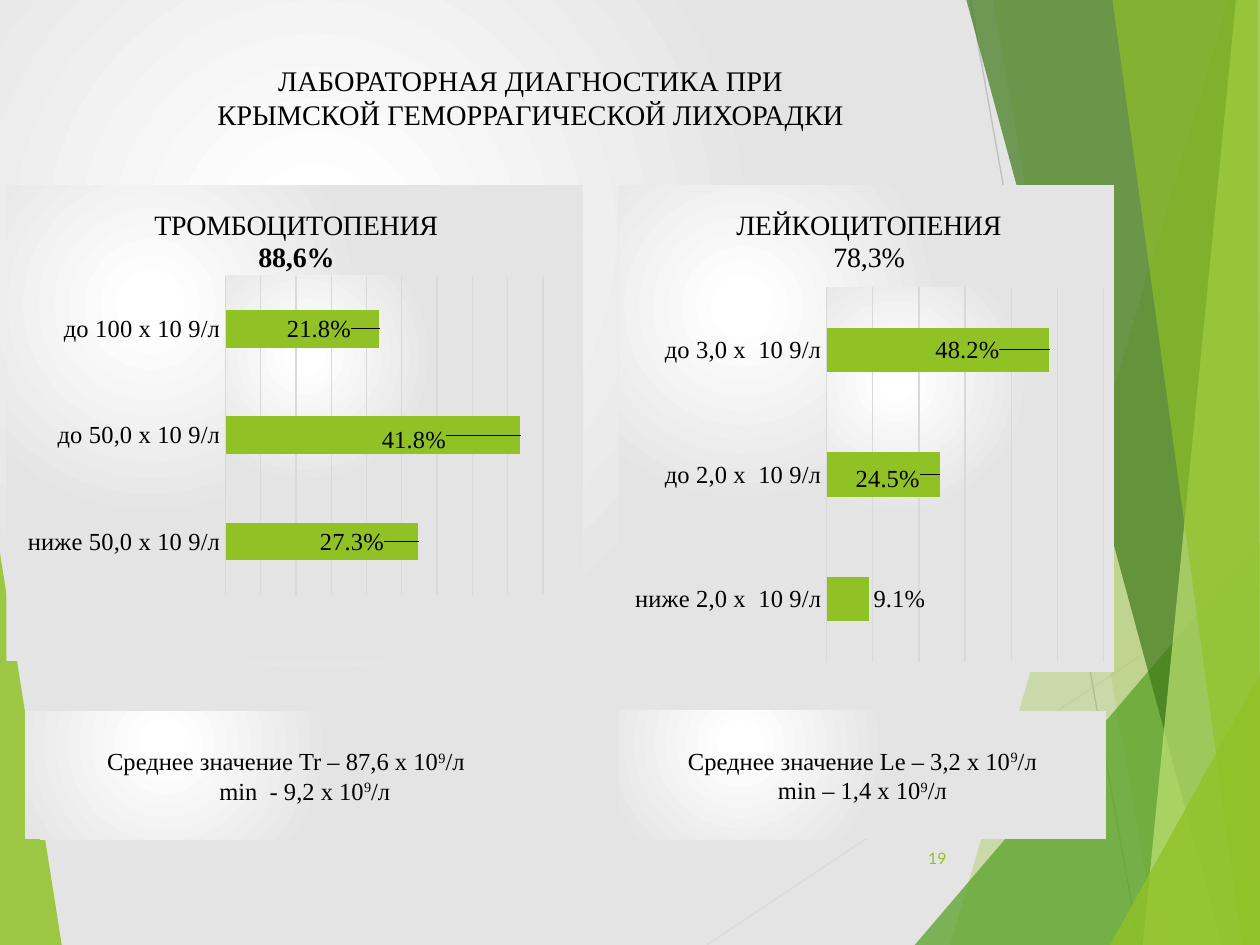
import pptx
import pptx.chart.data
import pptx.dml.color
import pptx.enum.chart
import pptx.enum.shapes
import pptx.enum.text
import pptx.oxml
import pptx.oxml.ns
import pptx.util

RGBColor = pptx.dml.color.RGBColor
LIME = RGBColor(0x90, 0xC2, 0x26)
GREEN = RGBColor(0x54, 0xA0, 0x21)
FOREST = RGBColor(0x3F, 0x78, 0x19)
PALE = RGBColor(0xC0, 0xE4, 0x74)
BLACK = RGBColor(0, 0, 0)
GRID = RGBColor(0xD9, 0xD9, 0xD9)
GREY = RGBColor(0xBF, 0xBF, 0xBF)
SERIF = "Times New Roman"
CELL = pptx.util.Inches(0.1)
COLUMNS, ROWS = 100, 75
NAMES = pptx.oxml.ns.nsdecls("a", "c")
GLOW = (
    f'<a:gradFill {NAMES} rotWithShape="1"><a:gsLst>'
    '<a:gs pos="5000"><a:srgbClr val="FFFFFF"/></a:gs>'
    '<a:gs pos="59000"><a:srgbClr val="E4E4E4"/></a:gs></a:gsLst>'
    '<a:path path="circle"><a:fillToRect l="50000" t="50000" r="100000" b="100000"/></a:path>'
    "</a:gradFill>"
)
CENTER = pptx.enum.text.PP_ALIGN.CENTER
MIDDLE = pptx.enum.text.MSO_ANCHOR.MIDDLE


def cells(*counts):
    return [pptx.util.Emu(round(count * CELL)) for count in counts]


def style(font, size, color=BLACK, name=SERIF, bold=False):
    font.size, font.name, font.bold = pptx.util.Pt(size), name, bold
    font.color.rgb = color


def add_span(para, text, size, raised=False, **look):
    span = para.add_run()
    span.text = text
    style(span.font, size, **look)
    if raised:
        span.font._element.set("baseline", "30000")


def glow(fill, holder):
    fill.solid()
    solid = holder.find(".//" + pptx.oxml.ns.qn("a:solidFill"))
    solid.getparent().replace(solid, pptx.oxml.parse_xml(GLOW))


def add_facet(page, color, opacity, *corners):
    points = [cells(*corner) for corner in corners]
    builder = page.shapes.build_freeform(*points[0], scale=1.0)
    builder.add_line_segments(points[1:], close=True)
    facet = builder.convert_to_shape()
    facet.shadow.inherit = False
    facet.line.fill.background()
    facet.fill.solid()
    facet.fill.fore_color.rgb = color
    tint = facet.element.spPr.find(".//" + pptx.oxml.ns.qn("a:srgbClr"))
    tint.append(pptx.oxml.parse_xml(f'<a:alpha {NAMES} val="{opacity * 1000}"/>'))


def add_ray(page, color, *ends):
    ray = page.shapes.add_connector(pptx.enum.shapes.MSO_CONNECTOR.STRAIGHT, *cells(*ends))
    ray.line.color.rgb = color
    ray.line.width = pptx.util.Pt(0.75)
    ray.element.spPr.append(pptx.oxml.parse_xml(f"<a:effectLst {NAMES}/>"))


def add_backdrop(page):
    glow(page.background.fill, page.element)
    add_facet(page, LIME, 85, (0, 43.9), (4.9, ROWS), (0, ROWS))
    add_ray(page, GRID, 56.1, ROWS, COLUMNS, 45.7)
    add_ray(page, GREY, 77, 0, 90.4, ROWS)
    right = [(COLUMNS, ROWS), (COLUMNS, 0)]
    add_facet(page, LIME, 30, (97.5, 0), (75.4, ROWS), *right)
    add_facet(page, LIME, 20, (78.8, 0), (91.9, ROWS), *right)
    add_facet(page, GREEN, 72, (72.6, ROWS), (COLUMNS, 42.9), (COLUMNS, ROWS))
    add_facet(page, FOREST, 70, (76.7, 0), (97, ROWS), *right)
    add_facet(page, PALE, 70, (98.1, 0), (90.7, ROWS), *right)
    add_facet(page, LIME, 65, (88.3, 0), (98.6, ROWS), (COLUMNS, ROWS), (99.8, 0))
    add_facet(page, LIME, 80, (88.1, ROWS), (COLUMNS, 53.5), (COLUMNS, ROWS))


def add_heading(page, area, lines):
    box = page.shapes.add_textbox(*cells(*area))
    box.text_frame.word_wrap = True
    para = box.text_frame.paragraphs[0]
    para.alignment = CENTER
    add_span(para, lines[0], 16.2)
    para.add_line_break()
    add_span(para, lines[1], 16.2)


def add_page_number(page, area, number):
    box = page.shapes.add_textbox(*cells(*area))
    box.text_frame.word_wrap = True
    box.text_frame.vertical_anchor = MIDDLE
    para = box.text_frame.paragraphs[0]
    para.alignment = pptx.enum.text.PP_ALIGN.RIGHT
    add_span(para, number, 9, color=LIME, name="Lato")


def add_summary(page, area, lines, shift=0):
    """Add a glowing panel whose first line is moved left by half of shift."""
    box = page.shapes.add_shape(pptx.enum.shapes.MSO_SHAPE.RECTANGLE, *cells(*area))
    box.shadow.inherit = False
    box.line.fill.background()
    glow(box.fill, box.element.spPr)
    frame = box.text_frame
    frame.word_wrap, frame.vertical_anchor = True, MIDDLE
    frame.margin_right = cells(1 + shift)[0]
    for index, line in enumerate(lines):
        para = frame.paragraphs[0] if index == 0 else frame.add_paragraph()
        para.alignment = CENTER
        if index:
            para._p.get_or_add_pPr().set("marL", str(cells(shift)[0]))
        for text, raised in zip((line, "9", "/л"), (False, True, False)):
            add_span(para, text, 14, raised)


def layout(x, y, width=None, height=None, inner=False):
    modes = "" if width is None and not x + y else ""
    if inner:
        modes = '<c:layoutTarget val="inner"/>'
    if inner or width is None:
        modes += '<c:xMode val="edge"/><c:yMode val="edge"/>'
    size = f'<c:w val="{width}"/><c:h val="{height}"/>' if inner else ""
    return pptx.oxml.parse_xml(
        f'<c:layout {NAMES}><c:manualLayout>{modes}<c:x val="{x}"/><c:y val="{y}"/>'
        f"{size}</c:manualLayout></c:layout>"
    )


def set_layout(owner, element, after=None):
    for old in owner.findall(pptx.oxml.ns.qn("c:layout")):
        owner.remove(old)
    if after:
        owner.find(pptx.oxml.ns.qn(after)).addnext(element)
    else:
        owner.insert(0, element)


def add_title(chart, lines, spot, bold_value):
    frame = chart.chart_title.text_frame
    for index, line in enumerate(lines):
        para = frame.paragraphs[0] if index == 0 else frame.add_paragraph()
        para.alignment = CENTER
        add_span(para, line, 16, bold=bool(index) and bold_value)
    chart.chart_title.include_in_layout = False
    set_layout(chart.chart_title._element, layout(*spot), "c:tx")


def style_axes(chart, top, step):
    names, values = chart.category_axis, chart.value_axis
    names.major_tick_mark = pptx.enum.chart.XL_TICK_MARK.NONE
    style(names.tick_labels.font, 14)
    values.minimum_scale, values.maximum_scale, values.major_unit = 0, top, step
    values.visible = False
    for line in (names.format.line, values.major_gridlines.format.line):
        line.color.rgb = GRID
        line.width = pptx.util.Pt(0.75)


def add_bars(page, area, rows, title, spot, plot, scale, position, bold_value=False):
    """Add a bar chart from rows of category, value and label offset."""
    data = pptx.chart.data.CategoryChartData(number_format="0.0%")
    data.categories = [row[0] for row in rows]
    data.add_series("Series 1", [row[1] for row in rows])
    kind = pptx.enum.chart.XL_CHART_TYPE.BAR_CLUSTERED
    chart = page.shapes.add_chart(kind, *cells(*area), data).chart
    style(chart.font, 14)
    chart.has_legend = False
    add_title(chart, title, spot, bold_value)
    style_axes(chart, *scale)
    bars = chart.plots[0]
    bars.gap_width, bars.vary_by_categories = 182, False
    series = bars.series[0]
    series.format.fill.solid()
    series.format.fill.fore_color.rgb = LIME
    for index, (_, _, offset) in enumerate(rows):
        label = series.points[index].data_label
        style(label.font, 14)
        label.position = position
        mark = series.data_labels._element.findall(pptx.oxml.ns.qn("c:dLbl"))[index]
        set_layout(mark, layout(*offset, width=0), "c:idx")
    body = chart._chartSpace.find(pptx.oxml.ns.qn("c:chart"))
    plot_area = body.find(pptx.oxml.ns.qn("c:plotArea"))
    set_layout(plot_area, layout(*plot, inner=True))
    paint = f"<c:spPr {NAMES}>{GLOW}<a:ln><a:noFill/></a:ln></c:spPr>"
    plot_area.append(pptx.oxml.parse_xml(paint))
    body.addnext(pptx.oxml.parse_xml(paint))


def main():
    deck = pptx.Presentation()
    deck.slide_width, deck.slide_height = cells(COLUMNS, ROWS)
    page = deck.slides.add_slide(deck.slide_layouts[6])
    add_backdrop(page)
    add_heading(page, (9.8, 4.5, 64.6, 5.9),
                ("ЛАБОРАТОРНАЯ ДИАГНОСТИКА ПРИ", "КРЫМСКОЙ ГЕМОРРАГИЧЕСКОЙ ЛИХОРАДКИ"))
    place = pptx.enum.chart.XL_LABEL_POSITION
    add_bars(page, (0.5, 14.7, 45.8, 37.8),
             [("ниже 50,0 х 10 9/л", 0.273, (-0.05, 0)),
              ("до 50,0 х 10 9/л", 0.418, (-0.12, 0.01)),
              ("до 100 х 10 9/л", 0.218, (-0.04, 0))],
             ("ТРОМБОЦИТОПЕНИЯ", "88,6%"), (0.25, 0.04), (0.38, 0.19, 0.55, 0.67),
             (0.45, 0.05), place.INSIDE_END, bold_value=True)
    add_page_number(page, (70.5, 66.1, 5.6, 4), "19")
    add_summary(page, (2, 56.5, 44.4, 10.1),
                ("Среднее значение Tr – 87,6 х 10", "min  - 9,2 х 10"), shift=3)
    add_summary(page, (49.1, 56.4, 38.7, 10.2),
                ("Среднее значение Le – 3,2 х 10", "min – 1,4 х 10"))
    add_bars(page, (49.1, 14.7, 39.3, 38.6),
             [("ниже 2,0 х  10 9/л", 0.091, (0, 0)),
              ("до 2,0 х  10 9/л", 0.245, (-0.18, 0.01)),
              ("до 3,0 х  10 9/л", 0.482, (-0.24, 0))],
             ("ЛЕЙКОЦИТОПЕНИЯ", "78,3%"), (0.23, 0.04), (0.42, 0.21, 0.56, 0.77),
             (0.6, 0.1), place.OUTSIDE_END)
    deck.save("out.pptx")


if __name__ == "__main__":
    main()
